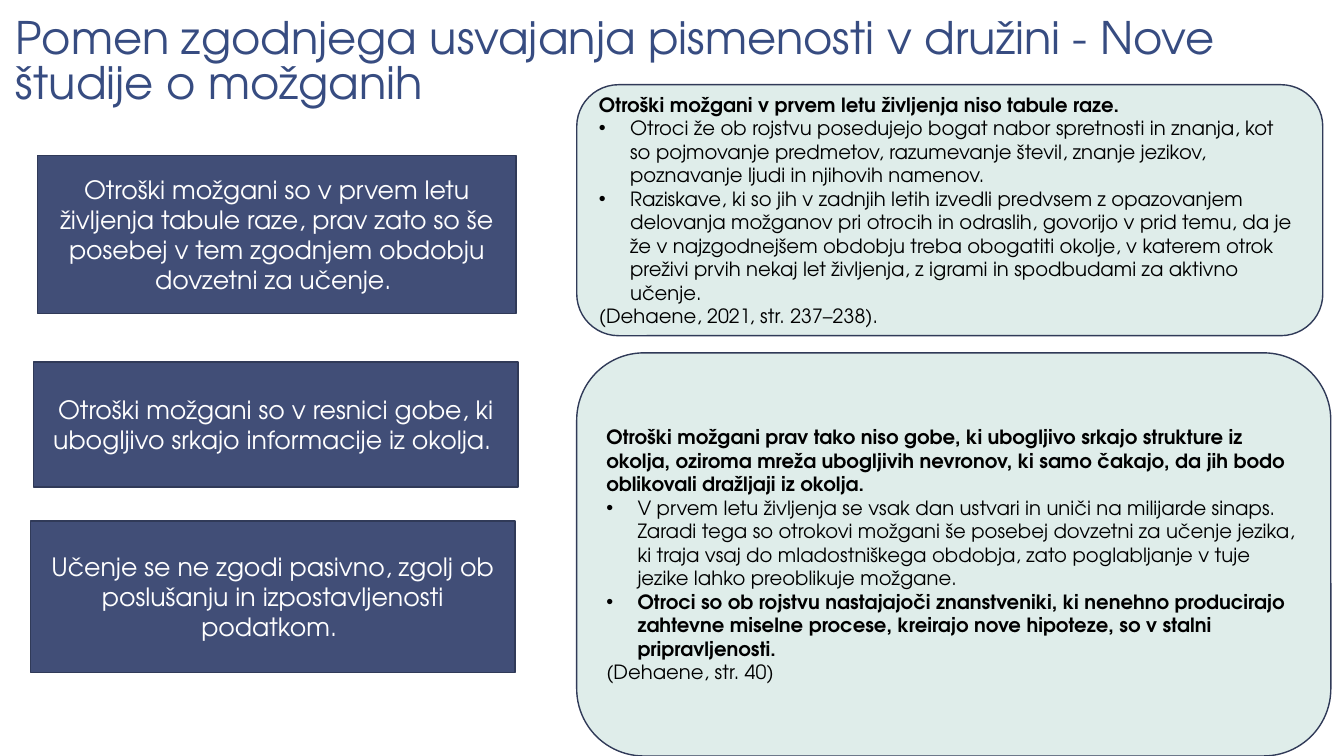
from lxml import etree
from pptx import Presentation
from pptx.dml.color import RGBColor
from pptx.enum.shapes import MSO_SHAPE
from pptx.enum.text import MSO_ANCHOR, MSO_AUTO_SIZE, PP_ALIGN
from pptx.oxml.ns import qn
from pptx.util import Inches, Pt

RECTANGLE, ROUNDED = MSO_SHAPE.RECTANGLE, MSO_SHAPE.ROUNDED_RECTANGLE
MIDDLE, BOTTOM = MSO_ANCHOR.MIDDLE, MSO_ANCHOR.BOTTOM
LEFT, CENTER = PP_ALIGN.LEFT, PP_ALIGN.CENTER
NO_AUTOFIT = MSO_AUTO_SIZE.NONE

FONT = "TeX Gyre Adventor"
TITLE_BLUE = RGBColor(0x37, 0x4C, 0x81)
NAVY = RGBColor(0x41, 0x4E, 0x77)
OUTLINE = RGBColor(0x30, 0x3A, 0x58)
MINT = RGBColor(0xDF, 0xED, 0xEA)
WHITE = RGBColor(0xFF, 0xFF, 0xFF)
BLACK = RGBColor(0x00, 0x00, 0x00)

SLIDE_WIDTH, SLIDE_HEIGHT = Inches(13.33), Inches(7.5)
BULLET_INDENT = Inches(0.31)

# Areas are left, top, width, height in percent of the slide
TITLE = "Pomen zgodnjega usvajanja pismenosti v družini - Nove študije o možganih"
TITLE_AREA = (0.2, 0.3, 99.8, 15.07)

MYTHS = [
    ((2.78, 20.53, 35.63, 20.93),
     "Otroški možgani so v prvem letu življenja tabule raze, prav zato so še "
     "posebej v tem zgodnjem obdobju dovzetni za učenje. "),
    ((2.48, 47.87, 36.08, 16.53),
     "Otroški možgani so v resnici gobe, ki ubogljivo srkajo informacije iz okolja. "),
    ((2.25, 68.93, 36.08, 20),
     "Učenje se ne zgodi pasivno, zgolj ob poslušanju in izpostavljenosti podatkom. "),
]

# Each paragraph is text, bold, bulleted
FACTS = [
    ((42.91, 11.2, 55.51, 33.2), [
        ("Otroški možgani v prvem letu življenja niso tabule raze.", True, False),
        ("Otroci že ob rojstvu posedujejo bogat nabor spretnosti in znanja, kot so "
         "pojmovanje predmetov, razumevanje števil, znanje jezikov, poznavanje ljudi "
         "in njihovih namenov.", False, True),
        ("Raziskave, ki so jih v zadnjih letih izvedli predvsem z opazovanjem "
         "delovanja možganov pri otrocih in odraslih, govorijo v prid temu, da je že "
         "v najzgodnejšem obdobju treba obogatiti okolje, v katerem otrok preživi "
         "prvih nekaj let življenja, z igrami in spodbudami za aktivno učenje.",
         False, True),
        ("(Dehaene, 2021, str. 237–238).", False, False),
    ]),
    ((42.91, 46.67, 56.11, 53.33), [
        ("Otroški možgani prav tako niso gobe, ki ubogljivo srkajo strukture iz "
         "okolja, oziroma mreža ubogljivih nevronov, ki samo čakajo, da jih bodo "
         "oblikovali dražljaji iz okolja.", True, False),
        ("V prvem letu življenja se vsak dan ustvari in uniči na milijarde sinaps. "
         "Zaradi tega so otrokovi možgani še posebej dovzetni za učenje jezika, ki "
         "traja vsaj do mladostniškega obdobja, zato poglabljanje v tuje jezike lahko "
         "preoblikuje možgane.", False, True),
        ("Otroci so ob rojstvu nastajajoči znanstveniki, ki nenehno producirajo "
         "zahtevne miselne procese, kreirajo nove hipoteze, so v stalni "
         "pripravljenosti.", True, True),
        ("(Dehaene, str. 40)", False, False),
    ]),
]


def to_lengths(area):
    """Turn percentages of the slide into lengths."""
    sides = (SLIDE_WIDTH, SLIDE_HEIGHT) * 2
    return [int(side * share / 100) for side, share in zip(sides, area)]


def add_span(para, text, size, color, bold=False):
    span = para.add_run()
    span.text = text
    span.font.name = FONT
    span.font.size = Pt(size)
    span.font.color.rgb = color
    span.font.bold = bold


def add_bullet(para):
    properties = para._p.get_or_add_pPr()
    properties.set("marL", str(BULLET_INDENT))
    properties.set("indent", str(-BULLET_INDENT))
    font = etree.SubElement(properties, qn("a:buFont"))
    font.set("typeface", "Arial")
    bullet = etree.SubElement(properties, qn("a:buChar"))
    bullet.set("char", "•")


def add_title(page):
    title = page.shapes.title
    title.left, title.top, title.width, title.height = to_lengths(TITLE_AREA)
    frame = title.text_frame
    frame.word_wrap = True
    frame.auto_size = NO_AUTOFIT
    frame.vertical_anchor = BOTTOM
    frame.margin_left = frame.margin_right = Inches(0.13)
    frame.margin_top = frame.margin_bottom = Inches(0.07)
    para = frame.paragraphs[0]
    para.alignment = LEFT
    para.line_spacing = 0.85
    add_span(para, TITLE, 32, TITLE_BLUE)


def add_panel(page, kind, area, fill):
    """Add an outlined panel and return its text frame."""
    box = page.shapes.add_shape(kind, *to_lengths(area))
    box.shadow.inherit = False
    box.fill.solid()
    box.fill.fore_color.rgb = fill
    box.line.color.rgb = OUTLINE
    box.line.width = Pt(1)
    frame = box.text_frame
    frame.word_wrap = True
    frame.vertical_anchor = MIDDLE
    return frame


def add_myth(page, area, text):
    para = add_panel(page, RECTANGLE, area, NAVY).paragraphs[0]
    para.alignment = CENTER
    add_span(para, text, 18, WHITE)


def add_fact(page, area, paragraphs):
    frame = add_panel(page, ROUNDED, area, MINT)
    for index, (text, bold, bulleted) in enumerate(paragraphs):
        para = frame.add_paragraph() if index else frame.paragraphs[0]
        para.alignment = LEFT
        if bulleted:
            add_bullet(para)
        add_span(para, text, 14, BLACK, bold)


def main():
    deck = Presentation()
    deck.slide_width, deck.slide_height = SLIDE_WIDTH, SLIDE_HEIGHT
    page = deck.slides.add_slide(deck.slide_layouts.get_by_name("Title Only"))

    add_title(page)
    # Common beliefs on the left
    for area, text in MYTHS:
        add_myth(page, area, text)
    # Research findings on the right
    for area, paragraphs in FACTS:
        add_fact(page, area, paragraphs)

    deck.save("out.pptx")


if __name__ == "__main__":
    main()
